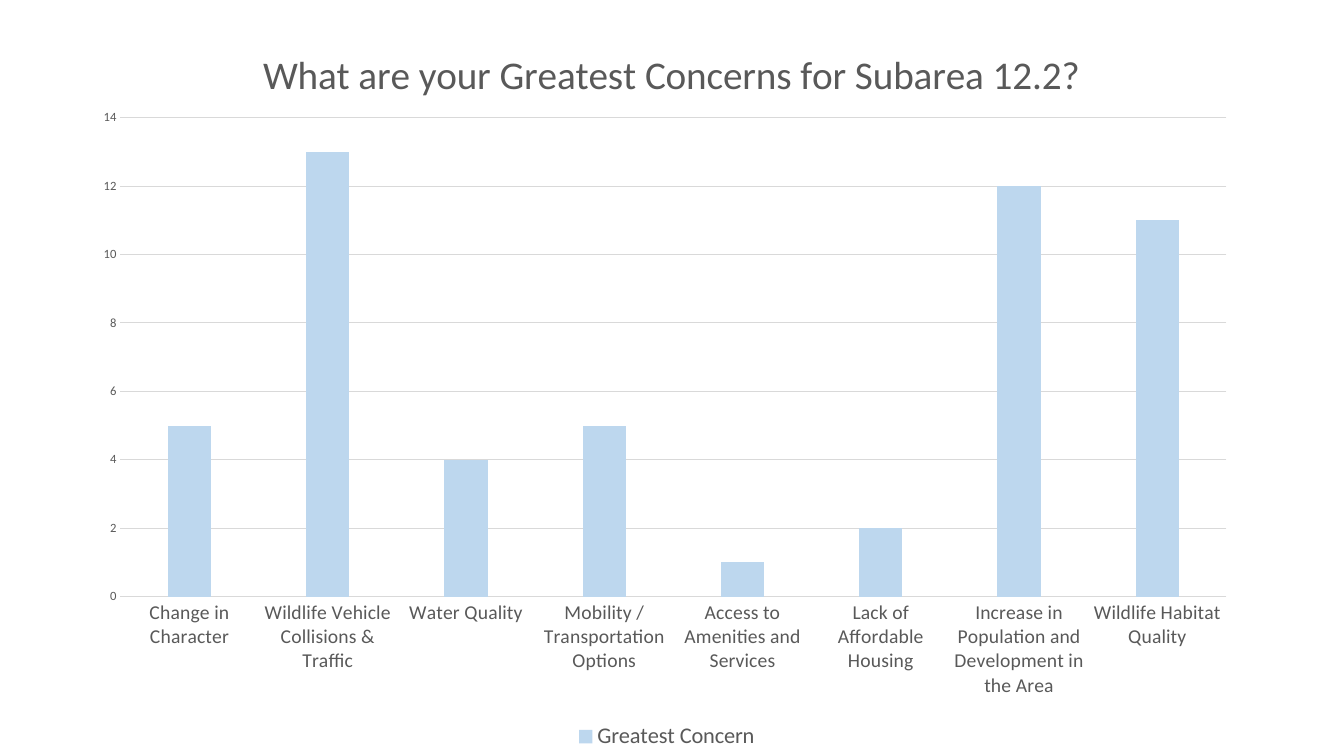
import pptx
import pptx.chart.data
import pptx.dml.color
import pptx.enum.chart
import pptx.oxml
import pptx.oxml.ns
import pptx.util
from dataclasses import dataclass

WIDE, HIGH = 13.33, 7.5


@dataclass(frozen=True)
class Theme:
    face: str = "Calibri"
    ink: str = "595959"
    rule: str = "D9D9D9"
    bar: str = "BDD7EE"
    head: int = 28
    key: int = 16
    name: int = 14
    tick: int = 9


THEME = Theme()

VOTES = {
    "Change in Character": 5,
    "Wildlife Vehicle Collisions & Traffic": 13,
    "Water Quality": 4,
    "Mobility / Transportation Options": 5,
    "Access to Amenities and Services": 1,
    "Lack of Affordable Housing": 2,
    "Increase in Population and Development in the Area": 12,
    "Wildlife Habitat Quality": 11,
}


def color(code):
    return pptx.dml.color.RGBColor.from_string(code)


def style(font, size, ink=THEME.ink):
    font.name = THEME.face
    font.size = pptx.util.Pt(size)
    font.bold = False
    font.color.rgb = color(ink)


def write(frame, text, **form):
    """Put one formatted run of text into a frame."""
    run = frame.paragraphs[0].add_run()
    run.text = text
    style(run.font, **form)


def draw(line):
    line.color.rgb = color(THEME.rule)
    line.width = pptx.util.Pt(0.75)


def place(part, spot, **share):
    """Fix a chart part by shares of the chart's size, as child number spot."""
    for old in part.findall(pptx.oxml.ns.qn("c:layout")):
        part.remove(old)
    modes = {axis + "Mode": "edge" for axis in "xy"}
    if "w" in share:
        modes = {"layoutTarget": "inner", **modes}
    tags = "".join(f'<c:{tag} val="{val}"/>' for tag, val in {**modes, **share}.items())
    part.insert(spot, pptx.oxml.parse_xml(
        f'<c:layout {pptx.oxml.ns.nsdecls("c")}>'
        f"<c:manualLayout>{tags}</c:manualLayout></c:layout>"))


def add_votes(slide, left, top, width, height):
    data = pptx.chart.data.CategoryChartData()
    data.categories = list(VOTES)
    data.add_series("Greatest Concern", list(VOTES.values()))
    box = [pptx.util.Inches(size) for size in (left, top, width, height)]
    kind = pptx.enum.chart.XL_CHART_TYPE.COLUMN_CLUSTERED
    chart = slide.shapes.add_chart(kind, *box, data).chart
    style(chart.font, THEME.tick)

    chart.has_title = True
    write(chart.chart_title.text_frame,
          "What are your Greatest Concerns for Subarea 12.2?", size=THEME.head)
    chart.chart_title.include_in_layout = False

    plot = chart.plots[0]
    plot.gap_width, plot.overlap = 219, -27
    plot.vary_by_categories = False
    fill = plot.series[0].format.fill
    fill.solid()
    fill.fore_color.rgb = color(THEME.bar)

    for axis, size in ((chart.category_axis, THEME.name), (chart.value_axis, THEME.tick)):
        axis.major_tick_mark = axis.minor_tick_mark = pptx.enum.chart.XL_TICK_MARK.NONE
        style(axis.tick_labels.font, size)
    draw(chart.category_axis.format.line)
    scale = chart.value_axis
    scale.minimum_scale, scale.maximum_scale, scale.major_unit = 0, 14, 2
    scale.format.line.fill.background()
    draw(scale.major_gridlines.format.line)

    chart.has_legend = True
    chart.legend.position = pptx.enum.chart.XL_LEGEND_POSITION.BOTTOM
    chart.legend.include_in_layout = False
    style(chart.legend.font, THEME.key)

    root = chart._chartSpace
    place(root.find(".//" + pptx.oxml.ns.qn("c:plotArea")), 0, x=0.034, y=0.134, w=0.946, h=0.65)
    place(root.find(".//" + pptx.oxml.ns.qn("c:title")), 1, x=0.15, y=0.03)
    place(root.find(".//" + pptx.oxml.ns.qn("c:legend")), 1, x=0.42, y=0.955)


def main():
    deck = pptx.Presentation()
    deck.slide_width = pptx.util.Inches(WIDE)
    deck.slide_height = pptx.util.Inches(HIGH)
    slide = deck.slides.add_slide(deck.slide_layouts[6])
    add_votes(slide, 0.06 * WIDE, 0.025 * HIGH, 0.87 * WIDE, 0.975 * HIGH)
    deck.save("out.pptx")


if __name__ == "__main__":
    main()
